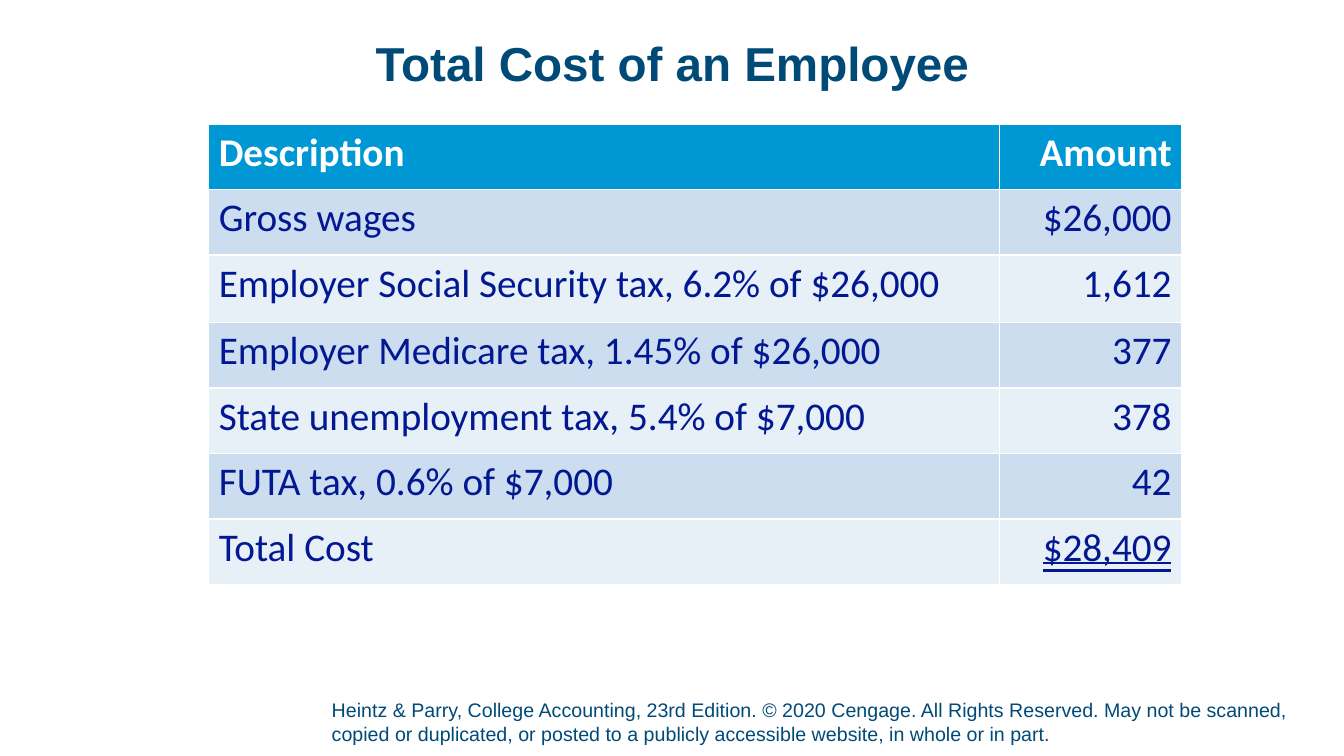
from pptx import Presentation
from pptx.dml.color import RGBColor
from pptx.enum.text import MSO_ANCHOR as Anchor, MSO_UNDERLINE as Under, PP_ALIGN as Align
from pptx.util import Emu, Pt

PX = 9144  # 100 px to the inch
WHITE = RGBColor(0xFF, 0xFF, 0xFF)
TEAL = RGBColor(0x00, 0x4A, 0x78)
NAVY = RGBColor(0x01, 0x18, 0x92)
HEAD = RGBColor(0x00, 0x98, 0xD4)
BANDS = [RGBColor(0xE7, 0xEF, 0xF7), RGBColor(0xCC, 0xDD, 0xEF)]

COSTS = [
    ("Description", "Amount"),
    ("Gross wages", "$26,000"),
    ("Employer Social Security tax, 6.2% of $26,000", "1,612"),
    ("Employer Medicare tax, 1.45% of $26,000", "377"),
    ("State unemployment tax, 5.4% of $7,000", "378"),
    ("FUTA tax, 0.6% of $7,000", "42"),
    ("Total Cost", "$28,409"),
]
NOTICE = ("Heintz & Parry, College Accounting, 23rd Edition. © 2020 Cengage. "
          "All Rights Reserved. May not be scanned, copied or duplicated, or posted "
          "to a publicly accessible website, in whole or in part.")
WIDTHS = [784, 181]
HEIGHTS = [65, 65, 67, 65, 65, 65, 65]


def px(*sizes):
    return [Emu(size * PX) for size in sizes]


def style(para, size, color, face="Arial", bold=False, align=Align.LEFT):
    para.alignment = align
    font = para.font
    font.name, font.size, font.bold = face, Pt(size), bold
    font.color.rgb = color


def fill_frame(frame, text, anchor, bottom=0):
    """Put text in a wrapped frame without margins, save at the bottom."""
    frame.word_wrap = True
    frame.vertical_anchor = anchor
    frame.margin_left = frame.margin_top = frame.margin_right = 0
    frame.margin_bottom = Emu(bottom * PX)
    frame.text = text
    return frame.paragraphs[0]


def add_title(slide, text):
    title = slide.shapes.title
    title.left, title.top, title.width, title.height = px(92, 40, 1150, 74)
    para = fill_frame(title.text_frame, text, Anchor.TOP)
    style(para, 34, TEAL, bold=True, align=Align.CENTER)
    para.line_spacing = 0.9


def add_notice(slide, text):
    box = slide.shapes.add_textbox(*px(329, 692, 979, 52))
    style(fill_frame(box.text_frame, text, Anchor.BOTTOM, 5), 14, TEAL)


def add_costs(slide, rows):
    frame = slide.shapes.add_table(len(rows), len(WIDTHS),
                                   *px(207, 123, sum(WIDTHS), sum(HEIGHTS)))
    table = frame.table
    for col, width in zip(table.columns, px(*WIDTHS)):
        col.width = width
    for row, height in zip(table.rows, px(*HEIGHTS)):
        row.height = height
    for r, values in enumerate(rows):
        top = r == 0
        for c, value in enumerate(values):
            cell = table.cell(r, c)
            cell.fill.solid()
            cell.fill.fore_color.rgb = HEAD if top else BANDS[r % 2]
            cell.text = value
            style(cell.text_frame.paragraphs[0], 28, WHITE if top else NAVY,
                  "Calibri", top, Align.RIGHT if c else Align.LEFT)
    total = table.cell(len(rows) - 1, 1).text_frame.paragraphs[0]
    total.runs[0].font.underline = Under.DOUBLE_LINE


def main():
    deck = Presentation()
    deck.slide_width, deck.slide_height = px(1333, 750)
    slide = deck.slides.add_slide(deck.slide_layouts[5])
    add_notice(slide, NOTICE)
    add_title(slide, "Total Cost of an Employee")
    add_costs(slide, COSTS)
    deck.save("out.pptx")


if __name__ == "__main__":
    main()
